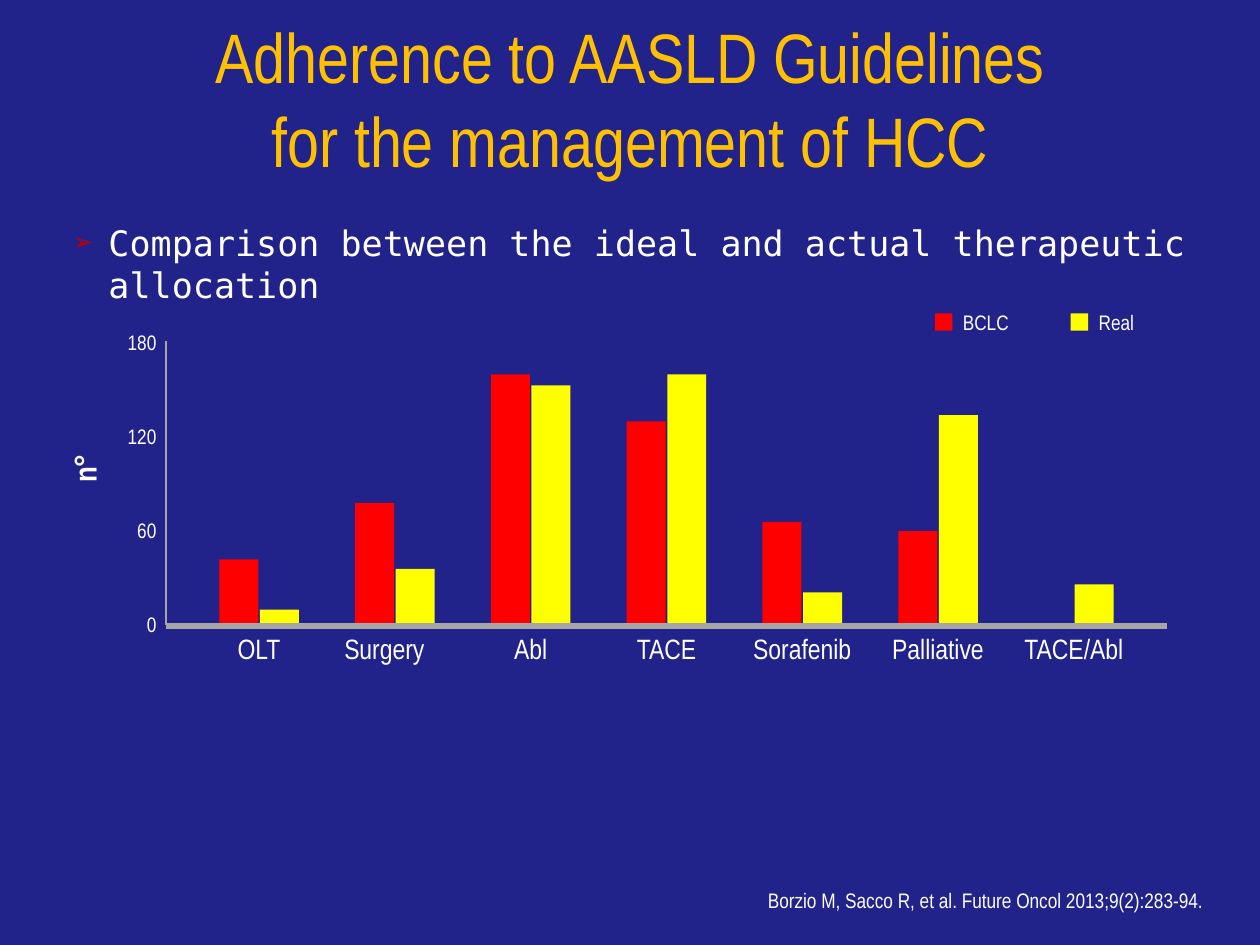
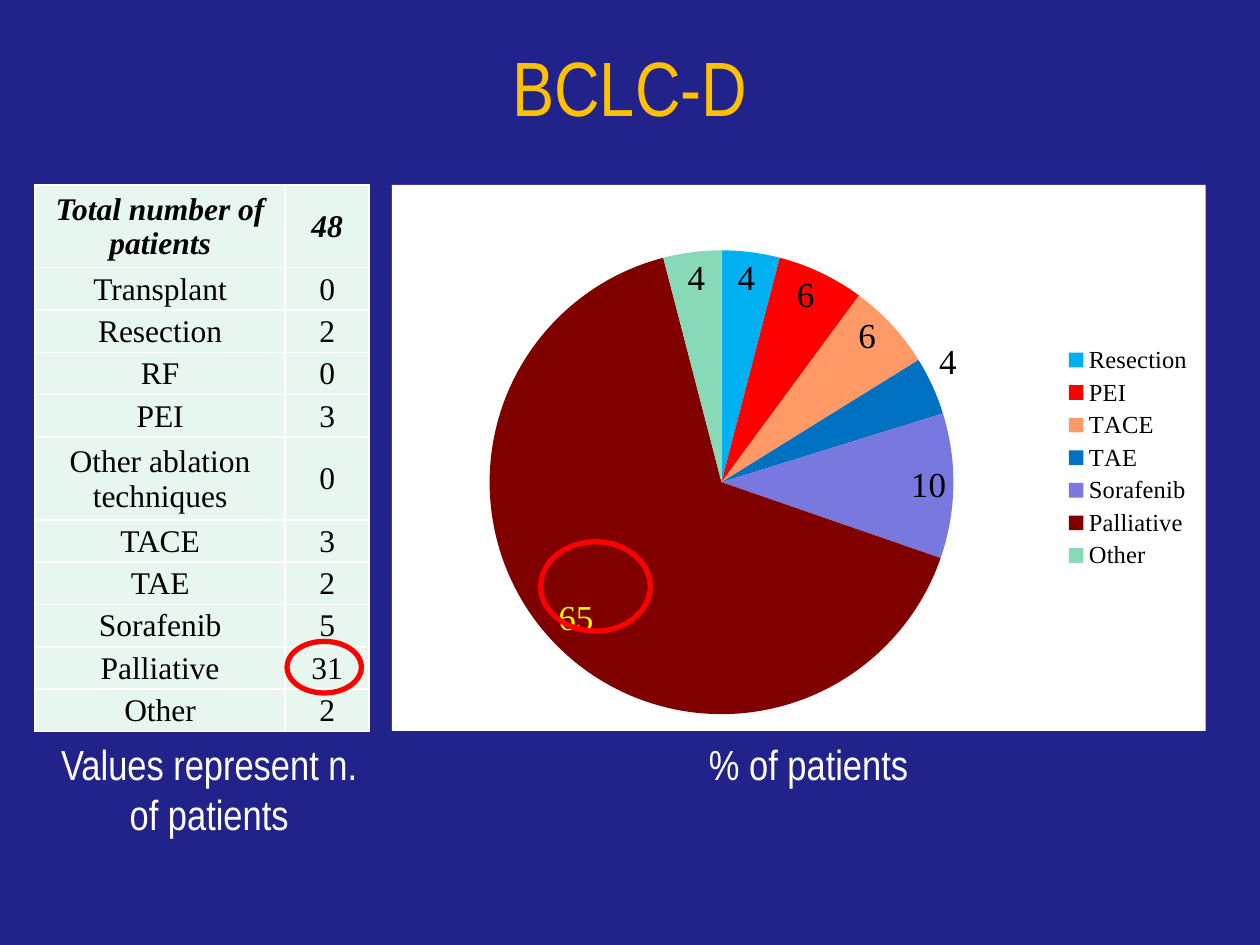
"""Build two slides on guideline adherence and BCLC-D treatment of HCC."""
import pptx
import pptx.chart.data
import pptx.dml.color
import pptx.enum.chart
import pptx.enum.shapes
import pptx.enum.text
import pptx.oxml
import pptx.oxml.ns
import pptx.util
from lxml import etree

Pt = pptx.util.Pt
ALIGN = pptx.enum.text.PP_ALIGN
ANCHOR = pptx.enum.text.MSO_ANCHOR
SHAPE = pptx.enum.shapes.MSO_SHAPE

NAVY, GOLD, WHITE, BLACK = "22228B", "FFC000", "FFFFFF", "000000"
RED, YELLOW, GREY, MINT = "FF0000", "FFFF00", "A6A6A6", "E7F6EF"
NARROW, MONO, SERIF = "Arial Narrow", "DejaVu Sans Mono", "Times New Roman"

BASELINE = 357.3
POINTS_PER_PATIENT = 0.896
GROUP_PITCH = 77.6
FIRST_BAR = 125.3
BAR_WIDTH = 22.3
BAR_STEP = 23.2
AXIS_LEFT, AXIS_RIGHT = 95, 666.7
ALLOCATION = [
    ("OLT", 42, 10, 0), ("Surgery", 78, 36, -6), ("Abl", 160, 153, 0),
    ("TACE", 130, 160, 0), ("Sorafenib", 66, 21, 0),
    ("Palliative", 60, 134, 0), ("TACE/Abl", 0, 26, 0),
]
GROUPS = [("BCLC", RED), ("Real", YELLOW)]

PATIENTS = [
    ("Total number of patients", 48), ("Transplant", 0), ("Resection", 2),
    ("RF", 0), ("PEI", 3), ("Other ablation techniques", 0), ("TACE", 3),
    ("TAE", 2), ("Sorafenib", 5), ("Palliative", 31), ("Other", 2),
]
SHARES = [
    ("Resection", 4, "00B0F0"), ("PEI", 6, RED), ("TACE", 6, "FF9966"),
    ("TAE", 4, "0070C0"), ("Sorafenib", 10, "7878DE"),
    ("Palliative", 65, "800000"), ("Other", 4, "87D9B8"),
]


def rgb(value):
    return pptx.dml.color.RGBColor.from_string(value)


def apply(target, formats):
    for name, value in formats.items():
        setattr(target, name, value)


def place(shape, box):
    apply(shape, dict(zip(("left", "top", "width", "height"), map(Pt, box))))


def set_font(font, name, size, color, bold=False, italic=False):
    apply(font, {"name": name, "size": Pt(size), "bold": bold, "italic": italic})
    font.color.rgb = rgb(color)


def fill_solid(fill, color):
    fill.solid()
    fill.fore_color.rgb = rgb(color)


def write(frame, lines, name, size, color, align, **font_formats):
    frame.text = "\n".join(lines)
    for paragraph in frame.paragraphs:
        apply(paragraph, {"alignment": align, "space_before": Pt(0)})
        for run in paragraph.runs:
            set_font(run.font, name, size, color, **font_formats)


def add_title(slide, lines, top, size):
    title = slide.shapes.title
    place(title, (0, top, 720, 90))
    apply(title.text_frame, {"word_wrap": True, "vertical_anchor": ANCHOR.MIDDLE,
                             "auto_size": pptx.enum.text.MSO_AUTO_SIZE.NONE})
    write(title.text_frame, lines, NARROW, size, GOLD, ALIGN.CENTER)


def add_bullet(slide, text):
    body = slide.placeholders[1]
    place(body, (26, 123, 669, 378))
    body.text_frame.auto_size = pptx.enum.text.MSO_AUTO_SIZE.NONE
    write(body.text_frame, [text], MONO, 20, WHITE, ALIGN.LEFT)
    properties = body.text_frame.paragraphs[0]._p.get_or_add_pPr()
    apply_xml = {"marL": Pt(28.8), "indent": Pt(-20.2)}
    for name, value in apply_xml.items():
        properties.set(name, str(int(value)))
    color = etree.SubElement(properties, pptx.oxml.ns.qn("a:buClr"))
    etree.SubElement(color, pptx.oxml.ns.qn("a:srgbClr"), val="C00000")
    etree.SubElement(properties, pptx.oxml.ns.qn("a:buSzPct"), val="68000")
    etree.SubElement(properties, pptx.oxml.ns.qn("a:buChar"), char="➢")


def add_label(slide, text, box, size, align, inset=(0, 0), rotation=0,
              anchor=ANCHOR.TOP, bold=False):
    label = slide.shapes.add_textbox(*map(Pt, box))
    label.rotation = rotation
    side, end = map(Pt, inset)
    apply(label.text_frame, {
        "word_wrap": True, "vertical_anchor": anchor, "margin_left": side,
        "margin_right": side, "margin_top": end, "margin_bottom": end})
    write(label.text_frame, [text], NARROW, size, WHITE, align, bold=bold)


def add_block(slide, box, color):
    block = slide.shapes.add_shape(SHAPE.RECTANGLE, *map(Pt, box))
    block.shadow.inherit = False
    fill_solid(block.fill, color)
    block.line.fill.background()


def add_ring(slide, box):
    ring = slide.shapes.add_shape(SHAPE.OVAL, *map(Pt, box))
    ring.shadow.inherit = False
    ring.fill.background()
    ring.line.color.rgb = rgb(RED)
    ring.line.width = Pt(3)


def add_axis(slide, ends, width):
    axis = slide.shapes.add_connector(
        pptx.enum.shapes.MSO_CONNECTOR.STRAIGHT, *map(Pt, ends))
    axis.line.color.rgb = rgb(GREY)
    axis.line.width = Pt(width)
    etree.SubElement(axis._element.spPr, pptx.oxml.ns.qn("a:effectLst"))


def add_bars(slide):
    add_axis(slide, (AXIS_LEFT, 195, AXIS_LEFT, BASELINE), 1)
    for tick in range(0, 181, 60):
        top = BASELINE - tick * POINTS_PER_PATIENT - 7.8
        add_label(slide, str(tick), (65.3, top, 24, 14.4), 12, ALIGN.RIGHT)
    for index, (treatment, ideal, actual, shift) in enumerate(ALLOCATION):
        left = FIRST_BAR + index * GROUP_PITCH
        for step, count in enumerate((ideal, actual)):
            height = count * POINTS_PER_PATIENT
            if count:
                add_block(slide, (left + step * BAR_STEP, BASELINE - height,
                                  BAR_WIDTH, height), GROUPS[step][1])
        middle = left + (BAR_STEP + BAR_WIDTH) / 2 + shift
        add_label(slide, treatment, (middle - 36, 361, 72, 13), 16, ALIGN.CENTER)
    add_axis(slide, (AXIS_LEFT, BASELINE + 0.4, AXIS_RIGHT, BASELINE + 0.4), 3)


def add_bar_legend(slide):
    for index, (group, color) in enumerate(GROUPS):
        left = 534.2 + index * GROUP_PITCH
        add_block(slide, (left, 179, 10, 10), color)
        add_label(slide, group, (left + 16, 177, 34, 14.4), 12, ALIGN.LEFT)


def border_cell(cell):
    properties = cell._tc.get_or_add_tcPr()
    for side in ("lnL", "lnR", "lnT", "lnB"):
        properties.append(pptx.oxml.parse_xml(
            f'<a:{side} {pptx.oxml.ns.nsdecls("a")} w="12700"><a:solidFill>'
            f'<a:srgbClr val="{WHITE}"/></a:solidFill></a:{side}>'))


def add_patient_table(slide):
    frame = slide.shapes.add_table(len(PATIENTS), 2, Pt(20), Pt(105.6), Pt(191), Pt(312.6))
    table = frame.table
    apply(table, {"first_row": False, "horz_banding": False})
    for column, width in zip(table.columns, (143, 48)):
        column.width = Pt(width)
    for index, entry in enumerate(PATIENTS):
        table.rows[index].height = Pt(47.4 if len(entry[0]) > 20 else 24.2)
        is_total = index == 0
        for cell, content in zip(table.rows[index].cells, entry):
            border_cell(cell)
            fill_solid(cell.fill, MINT)
            apply(cell, {"margin_left": Pt(0.7), "margin_right": Pt(0.7),
                         "margin_top": Pt(0.7), "margin_bottom": 0,
                         "vertical_anchor": ANCHOR.MIDDLE})
            write(cell.text_frame, [str(content)], SERIF, 18, BLACK,
                  ALIGN.CENTER, bold=is_total, italic=is_total)


def add_share_pie(slide):
    treatments, percents, colors = zip(*SHARES)
    data = pptx.chart.data.CategoryChartData(number_format="0")
    data.categories = treatments
    data.add_series("Series 1", percents)
    chart = slide.shapes.add_chart(
        pptx.enum.chart.XL_CHART_TYPE.PIE,
        Pt(224), Pt(105.6), Pt(465), Pt(312), data).chart
    apply(chart, {"has_title": False, "has_legend": True})
    set_font(chart.font, SERIF, 10, BLACK)
    apply(chart.legend, {"include_in_layout": False,
                         "position": pptx.enum.chart.XL_LEGEND_POSITION.RIGHT})
    set_font(chart.legend.font, SERIF, 14, BLACK)
    pie = chart.plots[0]
    apply(pie, {"vary_by_categories": True, "has_data_labels": True})
    best_fit = pptx.enum.chart.XL_LABEL_POSITION.BEST_FIT
    apply(pie.data_labels, {"show_value": True, "show_percentage": False,
                            "number_format": "0", "number_format_is_linked": False,
                            "position": best_fit})
    set_font(pie.data_labels.font, SERIF, 20, BLACK)
    points = pie.series[0].points
    for index, color in enumerate(colors):
        fill_solid(points[index].format.fill, color)
        label = points[index].data_label
        set_font(label.font, SERIF, 20,
                 YELLOW if treatments[index] == "Palliative" else BLACK)
        label.position = best_fit
    format_pie_area(chart)


def format_pie_area(chart):
    namespaces = pptx.oxml.ns.nsdecls("c", "a")
    area = chart._chartSpace.find(pptx.oxml.ns.qn("c:chart"))
    area.addnext(pptx.oxml.parse_xml(
        f'<c:spPr {namespaces}><a:solidFill><a:srgbClr val="{WHITE}"/></a:solidFill>'
        '<a:ln><a:noFill/></a:ln></c:spPr>'))
    plot = area.find(pptx.oxml.ns.qn("c:plotArea"))
    for automatic in plot.findall(pptx.oxml.ns.qn("c:layout")):
        plot.remove(automatic)
    sizes = {"x": 0.12, "y": 0.12, "w": 0.57, "h": 0.85}
    numbers = "".join(f'<c:{name} val="{value}"/>' for name, value in sizes.items())
    plot.insert(0, pptx.oxml.parse_xml(
        f'<c:layout {namespaces}><c:manualLayout><c:layoutTarget val="inner"/>'
        f'<c:xMode val="edge"/><c:yMode val="edge"/>{numbers}'
        '</c:manualLayout></c:layout>'))


def build_adherence(deck):
    slide = deck.slides.add_slide(deck.slide_layouts[1])
    add_title(slide, ["Adherence to AASLD Guidelines", "for the management of HCC"], 11, 40)
    add_bullet(slide, "Comparison between the ideal and actual therapeutic allocation")
    add_bar_legend(slide)
    add_bars(slide)
    add_label(slide, "n°", (29, 257, 38, 21.6), 18, ALIGN.CENTER, rotation=270, bold=True)
    add_label(slide, "Borzio M, Sacco R, et al. Future Oncol 2013;9(2):283-94.",
              (425.6, 507, 262, 14.4), 12, ALIGN.RIGHT, anchor=ANCHOR.BOTTOM)


def build_bclc_d(deck):
    slide = deck.slides.add_slide(deck.slide_layouts[5])
    add_title(slide, ["BCLC-D"], 4, 44)
    add_patient_table(slide)
    add_share_pie(slide)
    add_ring(slide, (164, 366.5, 42.5, 29.5))
    add_ring(slide, (309, 309.6, 62.6, 51))
    captions = [("Values represent n. of patients", (20, 418.3, 199, 65.5)),
                ("% of patients", (309, 418.3, 306, 36))]
    for caption, box in captions:
        add_label(slide, caption, box, 24, ALIGN.CENTER, inset=(7.2, 3.6))


def main():
    deck = pptx.Presentation()
    apply(deck, {"slide_width": Pt(720), "slide_height": Pt(540)})
    fill_solid(deck.slide_master.background.fill, NAVY)
    build_adherence(deck)
    build_bclc_d(deck)
    deck.save("out.pptx")


if __name__ == "__main__":
    main()
